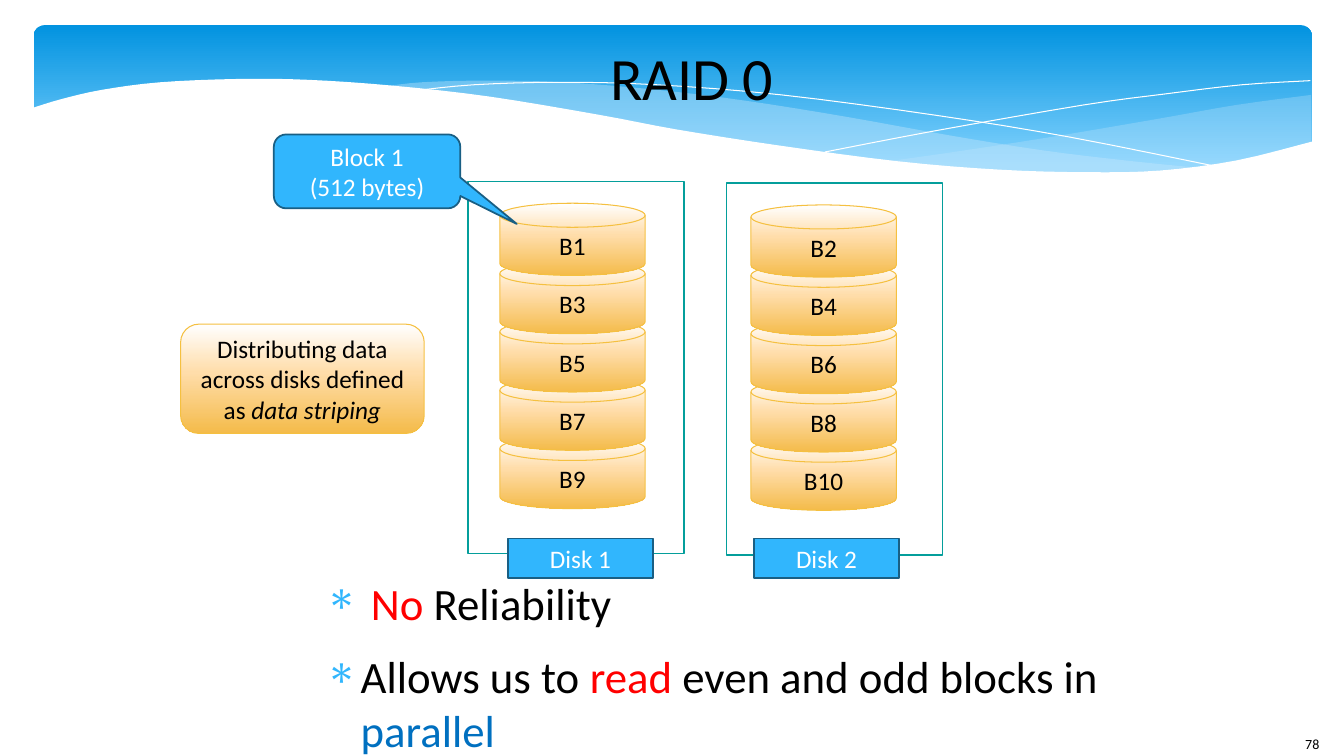
from dataclasses import dataclass
from itertools import pairwise

from lxml.etree import SubElement
from pptx import Presentation
from pptx.dml.color import RGBColor
from pptx.enum.shapes import MSO_SHAPE
from pptx.enum.text import MSO_ANCHOR, PP_ALIGN
from pptx.oxml.ns import qn
from pptx.util import Inches, Pt


@dataclass(frozen=True)
class Theme:
    font: str = "Calibri"
    ink: str = "000000"
    white: str = "FFFFFF"
    red: str = "FF0000"
    blue: str = "0070C0"
    sky: str = "31B6FD"
    navy: str = "195F84"
    teal: str = "049E9B"
    gold: str = "F5C040"
    mist: str = "C6E7FC"
    sand: tuple = ((0, "FFFFFF"), (44, "FFDDAA"), (100, "F4BB4A"))
    dawn: tuple = ((0, "0293E0"), (90, "83D3FE"))
    title: float = 42.9
    body: float = 32
    label: float = 18
    small: float = 10


class Board:
    """Draws on a grid of 160 columns by 90 rows."""

    def __init__(self, deck, theme):
        self.theme = theme
        self.slide = deck.slides.add_slide(deck.slide_layouts[6])
        self.shapes = self.slide.shapes
        self.col = deck.slide_width / 160
        self.row = deck.slide_height / 90

    def place(self, x, y):
        return round(x * self.col), round(y * self.row)

    def paint(self, shape, fill=None, line=None, width=1.25, alpha=None):
        shape.shadow.inherit = False
        if fill is None:
            shape.fill.background()
        elif isinstance(fill, tuple):
            self.blend(shape, fill)
        else:
            shape.fill.solid()
            shape.fill.fore_color.rgb = RGBColor.from_string(fill)
        if alpha:
            tint = shape.element.spPr.find(f".//{qn('a:srgbClr')}")
            SubElement(tint, qn("a:alpha"), val=str(alpha * 1000))
        if line:
            shape.line.color.rgb = RGBColor.from_string(line)
            shape.line.width = Pt(width)
        else:
            shape.line.fill.background()

    def blend(self, shape, stops):
        """Fill from top to bottom with (percent, colour) stops."""
        shape.fill.gradient()
        shape.fill.gradient_angle = 270
        group = shape.element.spPr.find(f".//{qn('a:gsLst')}")
        for old in list(group):
            group.remove(old)
        for share, tone in stops:
            stop = SubElement(group, qn("a:gs"), pos=str(share * 1000))
            SubElement(stop, qn("a:srgbClr"), val=tone)

    def shape(self, kind, x, y, w, h, fill, line=None, width=1.25, adjust=()):
        item = self.shapes.add_shape(kind, *self.place(x, y), *self.place(w, h))
        for i, value in enumerate(adjust):
            item.adjustments[i] = value
        self.paint(item, fill, line, width)
        return item

    def box(self, x, y, w, h, inset=True):
        frame = self.shapes.add_textbox(*self.place(x, y), *self.place(w, h)).text_frame
        if not inset:
            frame.margin_left = frame.margin_right = 0
            frame.margin_top = frame.margin_bottom = 0
        return frame

    def letter(self, frame, lines, size, color, align=PP_ALIGN.CENTER,
               anchor=MSO_ANCHOR.MIDDLE, bullet=None):
        """Each line is a list of (text, style); a style is a colour, "italic" or None."""
        frame.word_wrap = True
        frame.vertical_anchor = anchor
        for i, line in enumerate(lines):
            para = frame.paragraphs[0] if i == 0 else frame.add_paragraph()
            para.alignment = align
            if bullet:
                self.mark(para, bullet)
            para.font.name = self.theme.font
            para.font.size = Pt(size)
            para.font.color.rgb = RGBColor.from_string(color)
            for text, style in line:
                if text == "\n":
                    para.add_line_break()
                    continue
                run = para.add_run()
                run.text = text
                if style == "italic":
                    run.font.italic = True
                elif style:
                    run.font.color.rgb = RGBColor.from_string(style)

    def mark(self, para, sign):
        props = para._p.get_or_add_pPr()
        props.set("marL", str(Inches(0.47)))
        props.set("indent", str(Inches(-0.35)))
        tint = SubElement(props, qn("a:buClr"))
        SubElement(tint, qn("a:srgbClr"), val=self.theme.sky)
        SubElement(props, qn("a:buFont"), typeface="Symbol")
        SubElement(props, qn("a:buChar"), char=sign)
        para.space_after = Pt(14.1)

    def wave(self, *curves, fill=None, line=None, alpha=None):
        """Outline made of smooth curves; closed when filled."""
        dots = [self.place(*dot) for curve in curves for dot in smooth(curve)]
        pen = self.shapes.build_freeform(*dots[0])
        pen.add_line_segments(dots[1:], close=fill is not None)
        self.paint(pen.convert_to_shape(), fill, line, 0, alpha)


def smooth(knots, steps=4):
    """Catmull-Rom points through the knots."""
    if len(knots) < 3:
        return knots
    ends = [knots[0], *knots, knots[-1]]
    dots = [knots[0]]
    for i, (b, c) in enumerate(pairwise(knots)):
        a, d = ends[i], ends[i + 3]
        for step in range(1, steps + 1):
            t = step / steps
            dots.append(tuple(
                (2 * q + (r - p) * t + (2 * p - 5 * q + 4 * r - s) * t ** 2
                 + (3 * q - p - 3 * r + s) * t ** 3) / 2
                for p, q, r, s in zip(a, b, c, d)))
    return dots


def banner(board):
    look = board.theme
    board.shape(MSO_SHAPE.ROUNDED_RECTANGLE, 4, 3, 152.2, 18.7, look.dawn, adjust=[0.071])
    board.wave(
        [(156.1, 11.3), (147.2, 12.5), (137.6, 14.2), (124.6, 16.4), (112.9, 18.2), (105.8, 19.2)],
        [(105.8, 19.2), (115, 20), (124.9, 20.6), (133.6, 20.6), (140.9, 20), (147.4, 19.2),
         (156.1, 17)],
        fill=look.mist, alpha=29)
    board.wave(
        [(142.8, 20), (133.9, 19.1), (124.1, 17.9), (112.9, 16.1), (100.7, 13.9), (88.8, 12),
         (78.2, 10.7), (67.2, 9.8), (57.8, 9.6), (50.2, 9.8), (45.8, 10.3)],
        [(45.8, 10.3), (58, 11.6), (71.9, 13.9), (84.7, 16.2), (98.9, 18.4), (111.1, 19.8),
         (123.6, 20.6), (132.5, 20.8), (142.8, 20)],
        fill=look.mist, alpha=40)
    board.wave([(49.4, 10.8), (56.4, 10.1), (66.6, 9.8), (78.2, 10.1), (93, 11.3),
                (111.2, 13.7), (127.2, 16.3), (145.2, 19.9)], line=look.white)
    board.wave([(98.2, 18.1), (111.2, 15.6), (129, 12.5), (138.6, 11.2), (147.8, 10.1),
                (156, 9.6)], line=look.white)
    board.wave(
        [(156.4, 16.8), (147.2, 19.1), (138.1, 20.3), (129.4, 20.5), (119, 20.2),
         (106.9, 19.2), (92.6, 17.3), (80.5, 15.4), (71.5, 13.7), (58.3, 11.5), (46.8, 10.2),
         (36.7, 9.5), (28.2, 9.4), (19, 9.8), (12.1, 10.7), (7.3, 11.8), (3.7, 12.9)],
        [(3.7, 26.9), (156.4, 26.9)], fill=look.white)


def disk(board, number, frame, stack, top, label):
    look = board.theme
    board.shape(MSO_SHAPE.FLOWCHART_PROCESS, frame, top, 25.7, 44.3, look.white, look.teal)
    for level in reversed(range(5)):
        block = board.shape(MSO_SHAPE.FLOWCHART_MAGNETIC_DISK, stack, top + 2.6 + 6.94 * level,
                            17.3, 8.6, look.sand, look.gold, 0.75)
        board.letter(block.text_frame, [[(f"B{2 * level + number}", None)]], look.label, look.ink)
    tag = board.shape(MSO_SHAPE.FLOWCHART_PROCESS, label, 64.1, 17.2, 4.7, look.sky, look.navy)
    board.letter(tag.text_frame, [[(f"Disk {number}", None)]], look.label, look.white)


def main():
    deck = Presentation()
    deck.slide_width, deck.slide_height = Inches(13.33), Inches(7.5)
    look = Theme()
    board = Board(deck, look)
    banner(board)
    board.letter(board.box(154.2, 87, 9.8, 4.8), [[("78", None)]], look.small, look.ink,
                 PP_ALIGN.LEFT, MSO_ANCHOR.TOP)
    board.letter(board.box(33.7, 3, 97.3, 12.2, False), [[("RAID 0", None)]], look.title, look.ink)
    disk(board, 2, 86.5, 89.4, 21.8, 89.8)
    disk(board, 1, 55.7, 59.5, 21.6, 60.5)
    board.letter(board.box(37.3, 68.5, 105.1, 18.1, False), [
        [(" ", None), ("No", look.red), (" Reliability", None)],
        [("Allows us to ", None), ("read", look.red), (" even and odd blocks in ", None),
         ("\n", None), ("parallel", look.blue)],
    ], look.body, look.ink, PP_ALIGN.LEFT, MSO_ANCHOR.TOP, "∗")
    callout = board.shape(MSO_SHAPE.ROUNDED_RECTANGULAR_CALLOUT, 32.6, 16, 22.2, 8.8,
                          look.sky, look.navy, adjust=[0.803, 0.711, 0.167])
    board.letter(callout.text_frame, [[("Block 1", None)], [("(512 bytes)", None)]],
                 look.label, look.white)
    note = board.shape(MSO_SHAPE.ROUNDED_RECTANGLE, 21.5, 38.6, 29, 13, look.sand, look.gold, 0.75)
    board.letter(note.text_frame, [[("Distributing data across disks defined as ", None),
                                    ("data striping", "italic")]], look.label, look.ink)
    deck.save("out.pptx")


if __name__ == "__main__":
    main()
